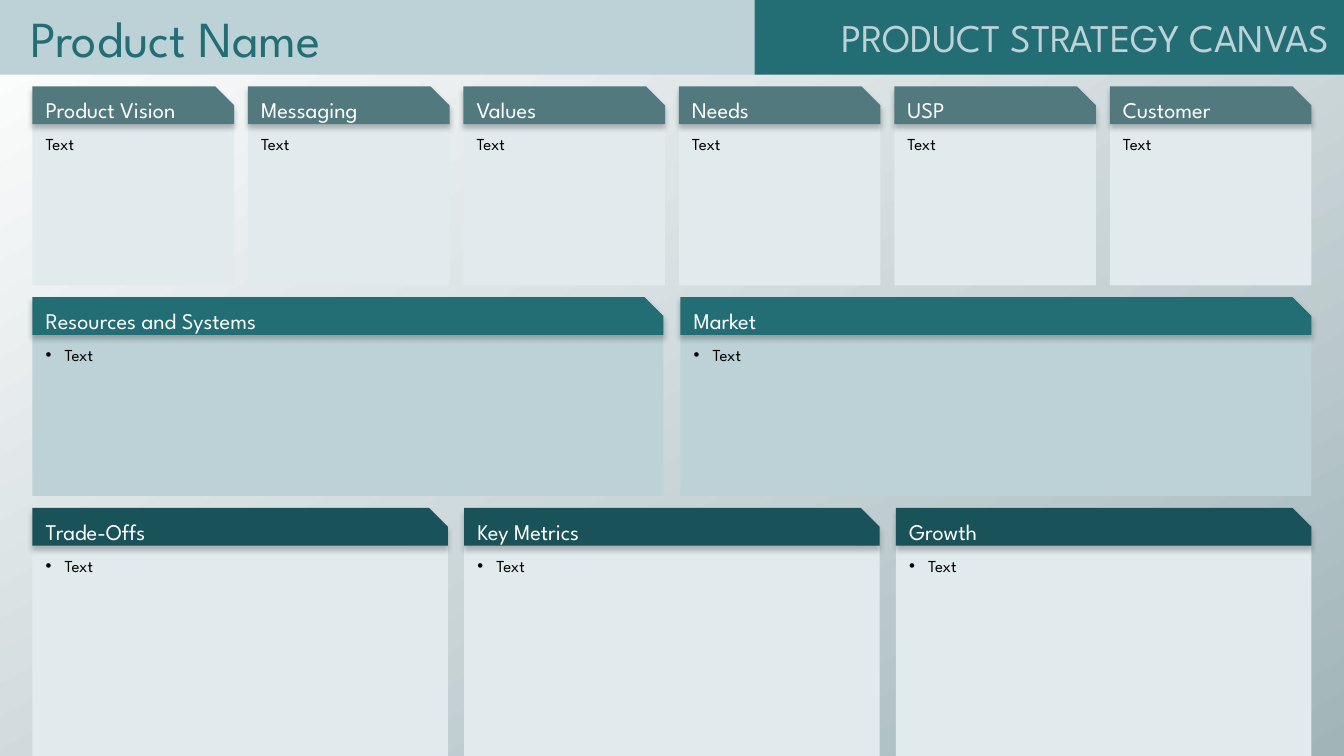
from pptx import Presentation
from pptx.dml.color import RGBColor
from pptx.enum import shapes, text
from pptx.oxml import parse_xml
from pptx.oxml.ns import nsdecls
from pptx.util import Cm, Pt

# Content
FONT = "League Spartan"
PRODUCT, CANVAS = "Product Name", "PRODUCT STRATEGY CANVAS"
PANEL_TEXT = "Text"
ROWS = [
    dict(headings=["Product Vision", "Messaging", "Values", "Needs", "USP", "Customer"],
         tab="527A7E", panel="E1EBED", width=5.08, height=4.06, bulleted=False),
    dict(headings=["Resources and Systems", "Market"],
         tab="236D74", panel="BCD2D7", width=15.9, height=4.06, bulleted=True),
    dict(headings=["Trade-Offs", "Key Metrics", "Growth"],
         tab="195258", panel="E1EBED", width=10.47, height=5.33, bulleted=True),
]

# Layout in cm
SLIDE_W, SLIDE_H = 33.87, 19.05
BANNER_H, BANNER_SPLIT = 1.88, 19.02
LEFT, RIGHT = 0.82, 33.05
FIRST_TOP, ROW_STEP, TAB_H = 2.18, 5.31, 0.95
BULLET_INDENT = 0.48
BANNER_PAD_LEFT, BANNER_PAD_RIGHT = (0.76, 0.13, 0.25, 0.13), (0, 0.13, 0.38, 0.13)
PANEL_PAD, TAB_PAD = (0.33, 0.25, 0.13, 0.13), (0.33, 0, 0, 0)


def colour(hex_value):
    return RGBColor.from_string(hex_value)


def add_block(kind, box, fill, words, size, ink, pad,
              anchor=text.MSO_ANCHOR.MIDDLE, align=text.PP_ALIGN.LEFT, bulleted=False):
    block = slide.shapes.add_shape(kind, *map(Cm, box))
    block.shadow.inherit = False
    block.fill.solid()
    block.fill.fore_color.rgb = colour(fill)
    block.line.fill.background()

    frame = block.text_frame
    frame.word_wrap = True
    frame.vertical_anchor = anchor
    (frame.margin_left, frame.margin_top,
     frame.margin_right, frame.margin_bottom) = map(Cm, pad)

    paragraph = frame.paragraphs[0]
    paragraph.text = words
    paragraph.alignment = align
    if bulleted:
        add_bullet(paragraph)
    paragraph.font.name = FONT
    paragraph.font.size = Pt(size)
    paragraph.font.color.rgb = colour(ink)
    return block


def add_bullet(paragraph):
    paragraph.space_after = Pt(6)
    properties = paragraph._p.get_or_add_pPr()
    properties.set("marL", str(Cm(BULLET_INDENT)))
    properties.set("indent", str(-Cm(BULLET_INDENT)))
    properties.append(parse_xml(f'<a:buFont {nsdecls("a")} typeface="Arial"/>'))
    properties.append(parse_xml(f'<a:buChar {nsdecls("a")} char="•"/>'))


def add_shadow(block):
    effects = block._element.spPr.find(
        "{http://schemas.openxmlformats.org/drawingml/2006/main}effectLst")
    effects.append(parse_xml(
        f'<a:outerShdw {nsdecls("a")} blurRad="{Pt(4)}" dist="{Pt(3)}" dir="5400000" '
        'algn="t" rotWithShape="0"><a:srgbClr val="595959"><a:alpha val="40000"/>'
        '</a:srgbClr></a:outerShdw>'))


deck = Presentation()
deck.slide_width, deck.slide_height = Cm(SLIDE_W), Cm(SLIDE_H)
slide = deck.slides.add_slide(deck.slide_layouts[6])
RECT, SNIPPED = shapes.MSO_SHAPE.RECTANGLE, shapes.MSO_SHAPE.SNIP_1_RECTANGLE

# Background gradient, running down to the right
backdrop = slide.background.fill
backdrop.gradient()
backdrop.gradient_angle = 300
for stop, shade in zip(backdrop.gradient_stops, ("FFFFFF", "A1B5B9")):
    stop.color.rgb = colour(shade)

# Banner
add_block(RECT, (0, 0, BANNER_SPLIT, BANNER_H), "BCD2D7",
          PRODUCT, 36, "236D74", BANNER_PAD_LEFT)
add_block(RECT, (BANNER_SPLIT, 0, SLIDE_W - BANNER_SPLIT, BANNER_H), "236D74",
          CANVAS, 28, "BCD2D7", BANNER_PAD_RIGHT, align=text.PP_ALIGN.RIGHT)

# Rows of panels, each under a tab with a cut corner
for row_index, row in enumerate(ROWS):
    top = FIRST_TOP + row_index * ROW_STEP
    width = row["width"]
    step = (RIGHT - LEFT - width) / (len(row["headings"]) - 1)
    for column, heading in enumerate(row["headings"]):
        left = LEFT + column * step
        add_block(RECT, (left, top + TAB_H, width, row["height"]), row["panel"],
                  PANEL_TEXT, 12, "000000", PANEL_PAD,
                  anchor=text.MSO_ANCHOR.TOP, bulleted=row["bulleted"])
        tab = add_block(SNIPPED, (left, top, width, TAB_H), row["tab"],
                        heading, 16, "FFFFFF", TAB_PAD)
        tab.adjustments[0] = 0.5
        add_shadow(tab)

deck.save("out.pptx")
